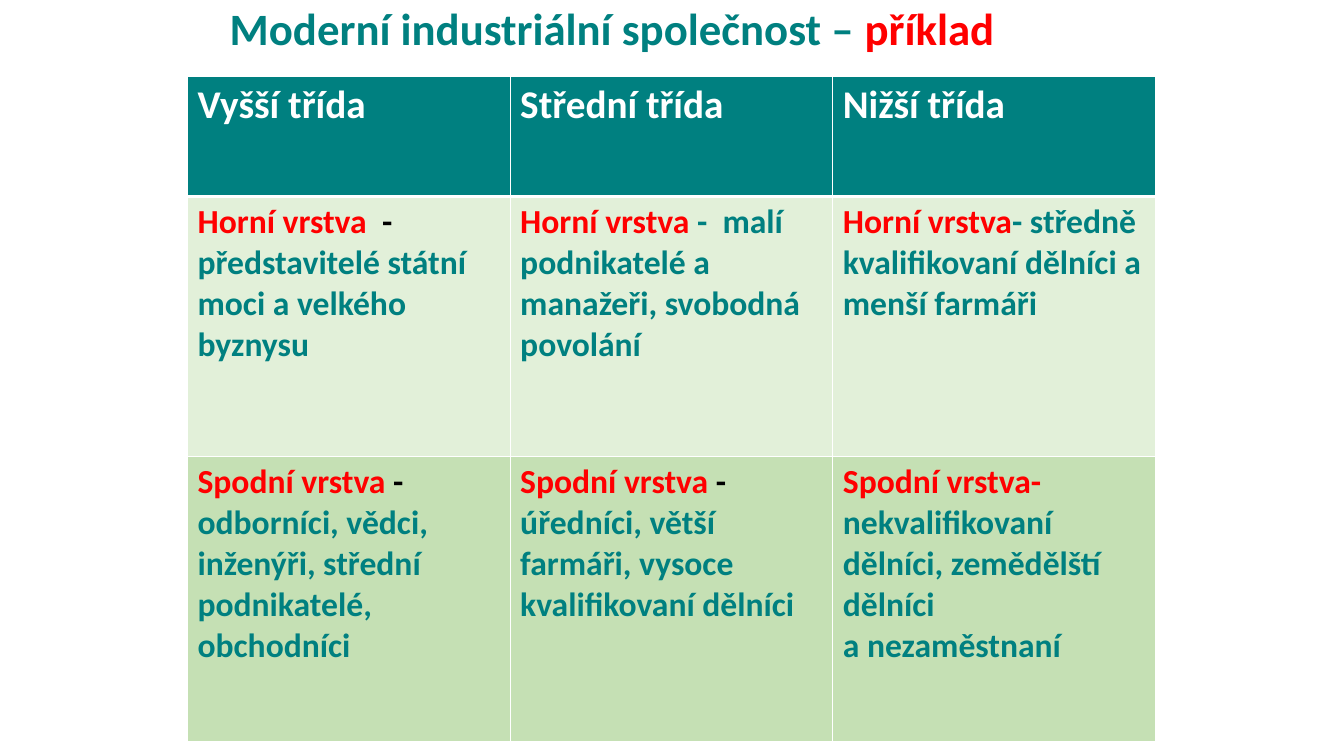
from lxml import etree
from pptx import Presentation
from pptx import util as u
from pptx.dml.color import RGBColor
from pptx.enum import text
from pptx.oxml.ns import qn

TEAL, RED, BLACK, WHITE = "008080", "FF0000", "000000", "FFFFFF"
ROW_FILLS = [TEAL, "E2F0D9", "C5E0B4"]
ROW_HEIGHTS = [1.19, 2.58, 2.83]
ROW_SIZES = [28, 24, 24]
COL_WIDTH = 3.2

TITLE = [[("Moderní industriální společnost – ", TEAL), ("příklad", RED)]]

# Each cell is a list of paragraphs; each paragraph is a list of (text, colour).
CLASSES = [
    [[[(name, WHITE)]] for name in ("Vyšší třída", "Střední třída", "Nižší třída")],
    [
        [[("Horní vrstva  ", RED), ("- ", BLACK),
          ("představitelé státní moci a velkého byznysu", TEAL)]],
        [[("Horní vrstva ", RED),
          ("-  malí podnikatelé a manažeři, svobodná povolání", TEAL)]],
        [[("Horní vrstva", RED),
          ("- středně kvalifikovaní dělníci a menší farmáři", TEAL)]],
    ],
    [
        [[("Spodní vrstva ", RED), ("-  ", BLACK),
          ("odborníci, vědci, inženýři, střední podnikatelé, obchodníci", TEAL)]],
        [[("Spodní vrstva ", RED), ("- ", BLACK),
          ("úředníci, větší farmáři, vysoce kvalifikovaní dělníci", TEAL)]],
        [[("Spodní vrstva-  ", RED),
          ("nekvalifikovaní dělníci, zemědělští dělníci", TEAL)],
         [("a nezaměstnaní", TEAL)]],
    ],
]


def rgb(color):
    return RGBColor.from_string(color)


class SlideBuilder:
    font = "Calibri"

    def __init__(self, prs):
        self.s = prs.slides.add_slide(prs.slide_layouts[6])

    def add_text(self, tf, paragraphs, size):
        for i, runs in enumerate(paragraphs):
            p = tf.paragraphs[0] if i == 0 else tf.add_paragraph()
            p.font.name, p.font.size, p.font.bold = self.font, u.Pt(size), True
            for words, color in runs:
                r = p.add_run()
                r.text = words
                r.font.color.rgb = rgb(color)

    def title(self, paragraphs, left, top, width, height, size):
        sp = self.s.shapes.add_textbox(*map(u.Inches, (left, top, width, height)))
        tf = sp.text_frame
        tf.word_wrap = True
        tf.vertical_anchor = text.MSO_ANCHOR.MIDDLE
        self.add_text(tf, paragraphs, size)
        tf.paragraphs[0].line_spacing = 0.9

    def borders(self, cell, top, bottom):
        """Draw white cell borders; top and bottom are widths in points."""
        tc_pr = cell._tc.get_or_add_tcPr()
        for side, width in (("L", 1), ("R", 1), ("T", top), ("B", bottom)):
            ln = etree.SubElement(tc_pr, qn(f"a:ln{side}"), w=str(u.Pt(width)))
            fill = etree.SubElement(ln, qn("a:solidFill"))
            etree.SubElement(fill, qn("a:srgbClr"), val=WHITE)

    def table(self, rows, left, top):
        n_rows, n_cols = len(rows), len(rows[0])
        table = self.s.shapes.add_table(
            n_rows, n_cols, u.Inches(left), u.Inches(top),
            u.Inches(COL_WIDTH * n_cols), u.Inches(sum(ROW_HEIGHTS))).table
        for col in table.columns:
            col.width = u.Inches(COL_WIDTH)
        for i, row in enumerate(rows):
            table.rows[i].height = u.Inches(ROW_HEIGHTS[i])
            for j, paragraphs in enumerate(row):
                cell = table.cell(i, j)
                self.borders(cell, 3 if i == 1 else 1, 3 if i == 0 else 1)
                cell.fill.solid()
                cell.fill.fore_color.rgb = rgb(ROW_FILLS[i])
                self.add_text(cell.text_frame, paragraphs, ROW_SIZES[i])


def main():
    prs = Presentation()
    prs.slide_width, prs.slide_height = u.Inches(13.33), u.Inches(7.5)
    slide = SlideBuilder(prs)
    slide.title(TITLE, 2.18, -0.27, 8.99, 1.15, 32)
    slide.table(CLASSES, 1.86, 0.76)
    prs.save("out.pptx")


if __name__ == "__main__":
    main()
